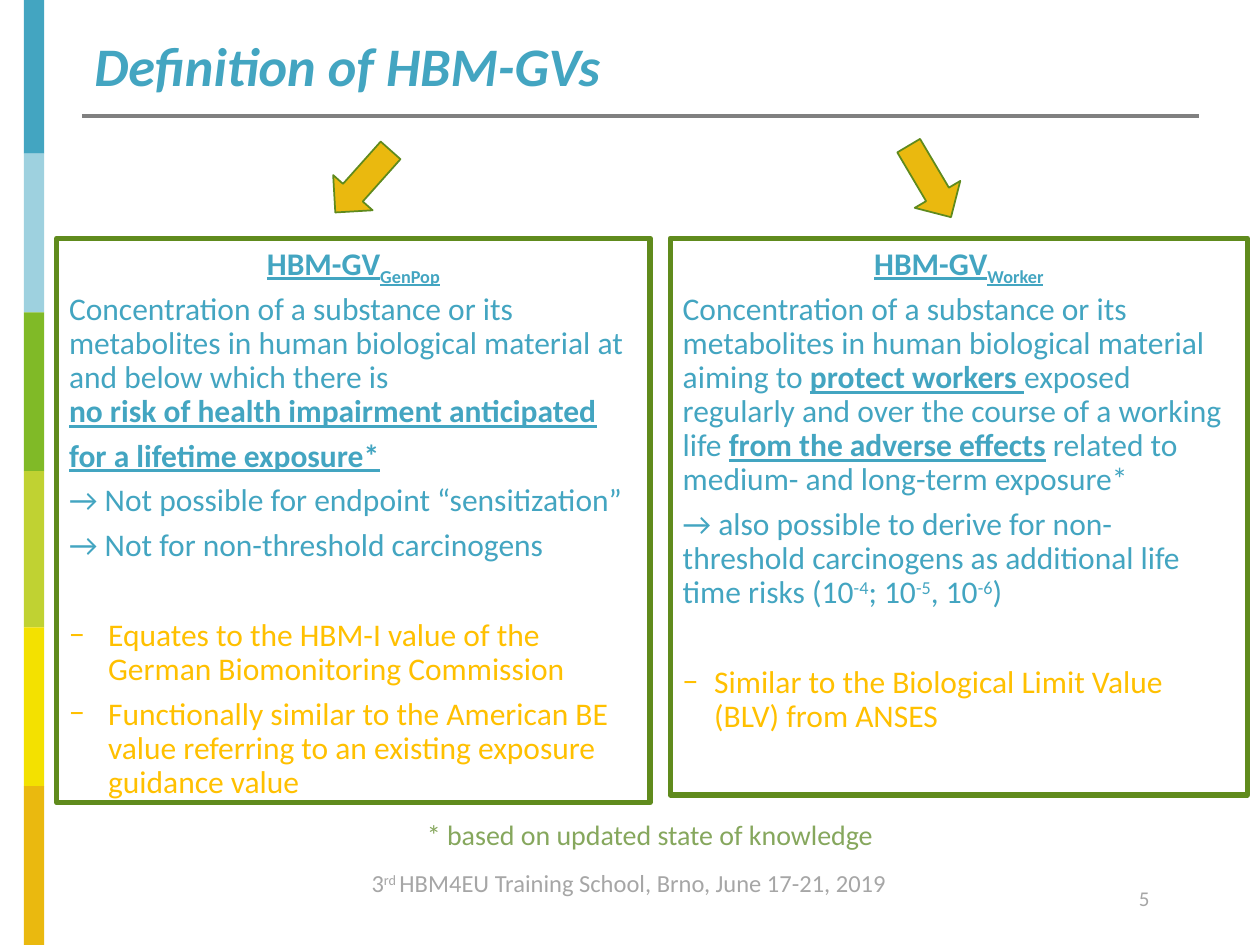
from dataclasses import dataclass

from lxml.etree import SubElement
from pptx import Presentation
from pptx.dml.color import RGBColor
from pptx.enum.shapes import MSO_CONNECTOR, MSO_SHAPE
from pptx.enum.text import MSO_ANCHOR, PP_ALIGN
from pptx.oxml.ns import qn
from pptx.util import Inches, Pt

FONT = "Calibri"
BLUE = "43A5C1"
GOLD = "EAB90F"
AMBER = "FFC000"
GRAY = "A6A6A6"


@dataclass
class Span:
    text: str
    strong: bool = False
    baseline: int = 0
    break_after: bool = False


@dataclass
class Block:
    spans: list[Span]
    color: str = BLUE
    centered: bool = False
    before: float = 6
    bullet_indent: float = 0


@dataclass
class Panel:
    left: float
    width: float
    height: float
    blocks: list[Block]


@dataclass
class Label:
    left: float
    top: float
    width: float
    height: float
    spans: list[Span]
    size: float
    color: str
    emphasis: bool = False


def rgb(color: str) -> RGBColor:
    return RGBColor.from_string(color)


def add_spans(paragraph, spans: list[Span], size: float, color: str) -> None:
    for span in spans:
        run = paragraph.add_run()
        run.text = span.text
        font = run.font
        font.name = FONT
        font.size = Pt(size)
        font.color.rgb = rgb(color)
        font.bold = span.strong
        font.underline = span.strong
        if span.baseline:
            font._element.set("baseline", str(span.baseline * 1000))
        if span.break_after:
            paragraph.add_line_break()


def add_bullet(paragraph, indent: float) -> None:
    properties = paragraph._p.get_or_add_pPr()
    properties.set("marL", str(Inches(indent)))
    properties.set("indent", str(-Inches(indent)))
    SubElement(properties, qn("a:buFont")).set("typeface", FONT)
    SubElement(properties, qn("a:buChar")).set("char", "−")


def add_panel(slide, panel: Panel) -> None:
    shape = slide.shapes.add_shape(
        MSO_SHAPE.RECTANGLE, Inches(panel.left), Inches(1.89),
        Inches(panel.width), Inches(panel.height))
    shape.shadow.inherit = False
    shape.fill.background()
    shape.line.color.rgb = rgb("608B1D")
    shape.line.width = Pt(3)
    text_frame = shape.text_frame
    text_frame.word_wrap = True
    text_frame.vertical_anchor = MSO_ANCHOR.TOP
    for index, block in enumerate(panel.blocks):
        paragraph = text_frame.add_paragraph() if index else text_frame.paragraphs[0]
        paragraph.alignment = PP_ALIGN.CENTER if block.centered else PP_ALIGN.LEFT
        paragraph.line_spacing = 0.9
        if index:
            paragraph.space_before = Pt(block.before)
        if block.bullet_indent:
            add_bullet(paragraph, block.bullet_indent)
        add_spans(paragraph, block.spans, 18, block.color)


def add_label(slide, label: Label) -> None:
    shape = slide.shapes.add_textbox(
        Inches(label.left), Inches(label.top), Inches(label.width), Inches(label.height))
    shape.text_frame.word_wrap = True
    paragraph = shape.text_frame.paragraphs[0]
    add_spans(paragraph, label.spans, label.size, label.color)
    for run in paragraph.runs:
        run.font.bold = label.emphasis
        run.font.italic = label.emphasis


def add_stripes(slide) -> None:
    colors = (BLUE, "9ED1DF", "80BA27", "C0D232", "F3E100", GOLD)
    edges = (0, 1.22, 2.48, 3.74, 4.98, 6.24, 7.5)
    for color, top, bottom in zip(colors, edges, edges[1:]):
        stripe = slide.shapes.add_shape(
            MSO_SHAPE.RECTANGLE, Inches(0.19), Inches(top), Inches(0.16), Inches(bottom - top))
        stripe.shadow.inherit = False
        stripe.fill.solid()
        stripe.fill.fore_color.rgb = rgb(color)
        stripe.line.fill.background()


def add_title_rule(slide) -> None:
    rule = slide.shapes.add_connector(
        MSO_CONNECTOR.STRAIGHT, Inches(0.65), Inches(0.92), Inches(9.52), Inches(0.92))
    rule.line.color.rgb = rgb("808080")
    rule.line.width = Pt(2)
    SubElement(rule._element.spPr, qn("a:effectLst"))


def add_arrow(slide, left: float, rotation: float) -> None:
    arrow = slide.shapes.add_shape(
        MSO_SHAPE.DOWN_ARROW, Inches(left), Inches(1.11), Inches(0.42), Inches(0.66))
    arrow.shadow.inherit = False
    arrow.rotation = rotation
    arrow.fill.solid()
    arrow.fill.fore_color.rgb = rgb(GOLD)
    arrow.line.color.rgb = rgb("5F8A1D")
    arrow.line.width = Pt(1)


def heading(group: str) -> Block:
    return Block([Span("HBM-GV", True), Span(group, True, -25)], centered=True)


PANELS = [
    Panel(0.45, 4.71, 4.48, [
        heading("GenPop"),
        Block([
            Span("Concentration of a substance or its metabolites in human biological "
                 "material at and below which there is", break_after=True),
            Span("no risk of health impairment anticipated", True)]),
        Block([Span("for a lifetime exposure*", True)]),
        Block([Span("→ Not possible for endpoint “sensitization”")]),
        Block([Span("→ Not for non-threshold carcinogens")]),
        Block([Span("Equates to the HBM-I value of the German Biomonitoring Commission")],
              AMBER, before=32, bullet_indent=0.31),
        Block([Span("Functionally similar to the American BE value referring to an "
                    "existing exposure guidance value")], AMBER, bullet_indent=0.31)]),
    Panel(5.32, 4.58, 4.42, [
        heading("Worker"),
        Block([
            Span("Concentration of a substance or its metabolites in human biological "
                 "material aiming to "),
            Span("protect workers ", True),
            Span("exposed regularly and over the course of a working life "),
            Span("from the adverse effects", True),
            Span(" related to medium- and long-term exposure*")]),
        Block([
            Span("→ also possible to derive for non-threshold carcinogens as additional "
                 "life time risks (10"),
            Span("-4", baseline=30), Span("; 10"), Span("-5", baseline=30),
            Span(", 10"), Span("-6", baseline=30), Span(")")]),
        Block([Span("Similar to the Biological Limit Value (BLV) from ANSES")],
              AMBER, before=32, bullet_indent=0.25)]),
]

LABELS = [
    Label(8.94, 6.98, 0.55, 0.4, [Span("5")], 12, GRAY),
    Label(0.65, 0.21, 4.86, 0.64, [Span("Definition of HBM-GVs")], 31, BLUE, True),
    Label(2.85, 6.84, 4.41, 0.34, [
        Span("3"), Span("rd ", baseline=30),
        Span("HBM4EU Training School, Brno, June 17-21, 2019")], 14, GRAY),
    Label(3.29, 6.44, 5.13, 0.37, [Span("* based on updated state of knowledge")],
          16, "86A75D"),
]


def main() -> None:
    presentation = Presentation()
    presentation.slide_width = Inches(10)
    presentation.slide_height = Inches(7.5)
    slide = presentation.slides.add_slide(presentation.slide_layouts[6])
    add_stripes(slide)
    add_title_rule(slide)
    for panel in PANELS:
        add_panel(slide, panel)
    for left, rotation in ((2.67, 41.7), (7.17, 329.4)):
        add_arrow(slide, left, rotation)
    for label in LABELS:
        add_label(slide, label)
    presentation.save("out.pptx")


if __name__ == "__main__":
    main()
